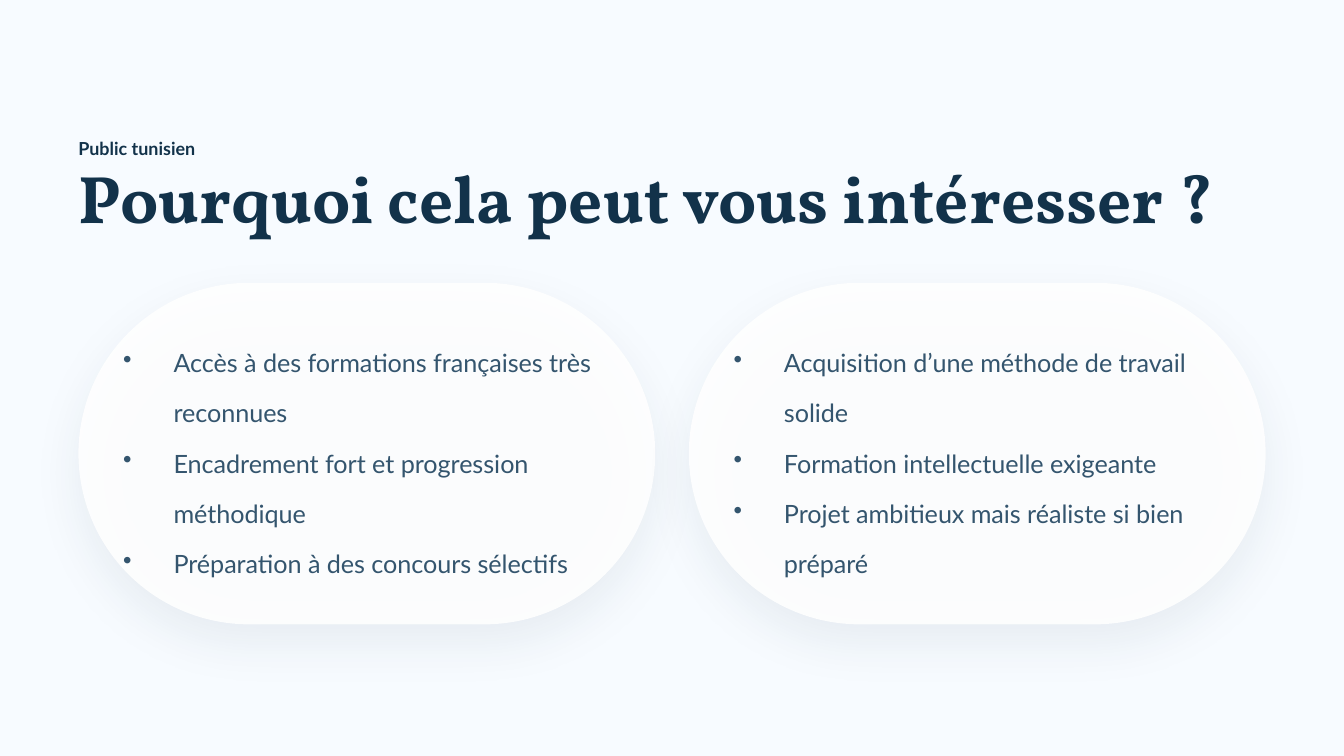
from lxml.etree import SubElement
from pptx import Presentation
from pptx.dml.color import RGBColor
from pptx.enum.shapes import MSO_SHAPE
from pptx.enum.text import MSO_ANCHOR, MSO_AUTO_SIZE, PP_ALIGN
from pptx.oxml.ns import qn
from pptx.util import Inches, Pt

W = 10
H = W * 9 / 16
UNIT = W / 960
MARGIN, CARD_W, GAP = 56, 412, 24
CARD_TOP, CARD_H = 202, 244
PAD_X, PAD_Y = 32, 31.5
INDENT = Pt(27)
COLORS = {"bg": "F7FBFF", "card": "FFFFFF", "navy": "12324A", "body": "34556E"}
STYLES = {
    "kicker": {"name": "Lato", "size": Pt(9.6), "bold": True, "color": "navy", "leading": 14.4},
    "title": {"name": "Vollkorn", "size": Pt(36), "bold": True, "color": "navy", "leading": 36},
    "body": {"name": "Lato", "size": Pt(13.5), "bold": False, "color": "body", "leading": 27},
}
CARDS = [
    ["Accès à des formations françaises très reconnues",
     "Encadrement fort et progression méthodique",
     "Préparation à des concours sélectifs"],
    ["Acquisition d’une méthode de travail solide",
     "Formation intellectuelle exigeante",
     "Projet ambitieux mais réaliste si bien préparé"],
]


def rgb(key):
    """Return a named colour."""
    return RGBColor.from_string(COLORS[key])


def emu(*units):
    """Convert grid units to slide lengths."""
    return [Inches(u * UNIT) for u in units]


def add_bullet(p):
    """Give a paragraph a round bullet with a hanging indent."""
    pPr = p._p.get_or_add_pPr()
    pPr.set("marL", str(INDENT))
    pPr.set("indent", str(-INDENT))
    SubElement(pPr, qn("a:buSzPct"), val="100000")
    SubElement(pPr, qn("a:buChar"), char="•")


def write(sp, lines, style, bullets=False):
    """Fill a shape with one paragraph per line in the given style."""
    tf = sp.text_frame
    frame = {"margin_left": 0, "margin_right": 0, "margin_top": 0, "margin_bottom": 0,
             "word_wrap": True, "auto_size": MSO_AUTO_SIZE.NONE,
             "vertical_anchor": MSO_ANCHOR.TOP}
    for name, value in frame.items():
        setattr(tf, name, value)
    fmt = STYLES[style]
    for i, line in enumerate(lines):
        p = tf.add_paragraph() if i else tf.paragraphs[0]
        if bullets:
            add_bullet(p)
        p.alignment = PP_ALIGN.LEFT
        p.line_spacing = Pt(fmt["leading"])
        r = p.add_run()
        r.text = line
        for name in ("name", "size", "bold"):
            setattr(r.font, name, fmt[name])
        r.font.color.rgb = rgb(fmt["color"])


def add_header(s, x, y, w):
    """Place the kicker and the title from the given corner."""
    kicker = s.shapes.add_textbox(*emu(x, y, w, 19))
    write(kicker, ["Public tunisien"], "kicker")
    title = s.shapes.title
    for name, value in zip(("left", "top", "width", "height"), emu(x, y + 27, w, 48)):
        setattr(title, name, value)
    write(title, ["Pourquoi cela peut vous intéresser ?"], "title")


def add_card(s, x, y, w, h, lines):
    """Place a translucent rounded card with a soft shadow and its bullets."""
    card = s.shapes.add_shape(MSO_SHAPE.ROUNDED_RECTANGLE, *emu(x, y, w, h))
    card.adjustments[0] = 0.5
    card.fill.solid()
    card.fill.fore_color.rgb = rgb("card")
    card.line.fill.background()
    card.shadow.inherit = False
    spPr = card._element.spPr
    fill = spPr.find(qn("a:solidFill")).find(qn("a:srgbClr"))
    SubElement(fill, qn("a:alpha"), val="88000")
    shadow = SubElement(spPr.find(qn("a:effectLst")), qn("a:outerShdw"),
                        blurRad=str(Pt(25.5)), dist=str(Pt(10.5)), dir="5400000",
                        algn="bl", rotWithShape="0")
    tint = SubElement(shadow, qn("a:srgbClr"), val=COLORS["navy"])
    SubElement(tint, qn("a:alpha"), val="7000")
    inner = emu(x + PAD_X, y + PAD_Y, w - 2 * PAD_X, h - 2 * PAD_Y)
    write(s.shapes.add_textbox(*inner), lines, "body", bullets=True)


def main():
    """Build the slide and save it."""
    prs = Presentation()
    prs.slide_width, prs.slide_height = Inches(W), Inches(H)
    s = prs.slides.add_slide(prs.slide_layouts[5])
    s.background.fill.solid()
    s.background.fill.fore_color.rgb = rgb("bg")
    add_header(s, MARGIN, 94.5, 865)
    for i, lines in enumerate(CARDS):
        add_card(s, MARGIN + i * (CARD_W + GAP), CARD_TOP, CARD_W, CARD_H, lines)
    prs.save("out.pptx")


if __name__ == "__main__":
    main()
